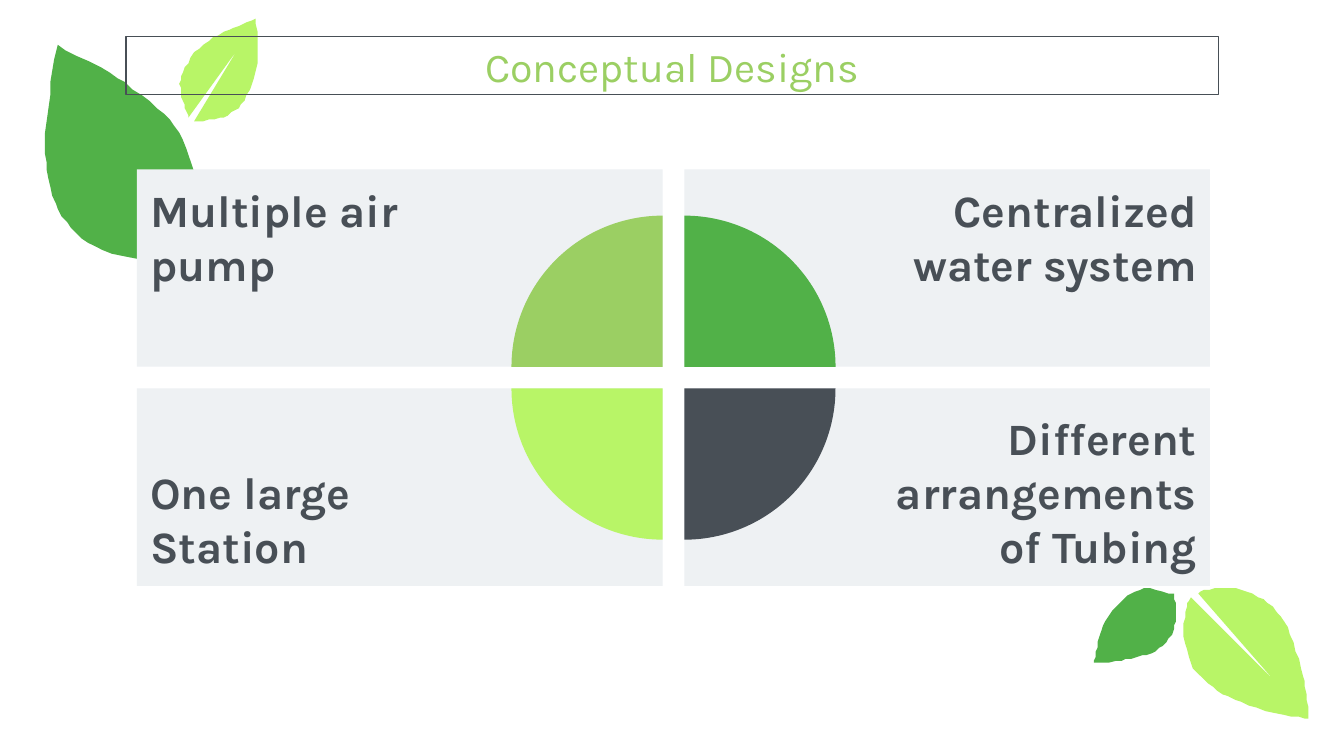
import pptx
import pptx.dml.color
import pptx.enum.shapes
import pptx.enum.text
import pptx.util

Pt = pptx.util.Pt
SHAPE = pptx.enum.shapes.MSO_SHAPE
ALIGN = pptx.enum.text.PP_ALIGN
ANCHOR = pptx.enum.text.MSO_ANCHOR

FONT = "Karla"
COLORS = {
    "lime": "B8F567",
    "green": "51B148",
    "olive": "9BCF63",
    "slate": "484F56",
    "panel": "EEF1F3",
}

# Panel grid, in points
LEFT, TOP = 73.4, 90.7
WIDTH, HEIGHT = 281.6, 105.8
GAP = 11.6
RADIUS = 81
INSET, PIE_INSET = 7.2, 108

# Text, column, row, pie colour and pie rotation
PANELS = [
    ("Multiple air pump", 0, 0, "olive", 0),
    ("Centralized water system", 1, 0, "green", 90),
    ("One large Station", 0, 1, "lime", 270),
    ("Different arrangements of Tubing", 1, 1, "slate", 180),
]

# Each leaf has two smooth edges that meet at the tip, and maybe a notch for the vein
LEAVES = [
    ("lime",
     [(641.5, 317.5), (650.9, 315.4), (662.4, 315.4), (673.9, 319.7), (684, 327.6),
      (691.2, 339.8), (697, 357.8), (699.8, 371.5), (701.3, 385.2)],
     [(701.3, 385.2), (687.6, 383), (668.9, 378), (655.2, 371.5), (645.1, 364.3),
      (637.9, 355), (634.3, 341.3), (635, 327.6), (637.9, 320.4)],
     [(682.6, 365)]),
    ("green",
     [(628.6, 318.2), (615.6, 315.4), (606.2, 317.5), (597.6, 324.7), (591.1, 335.5),
      (587.5, 347), (586.1, 355)],
     [(586.1, 355), (597.6, 354.2), (609.1, 352.1), (619.2, 348.5), (626.4, 342),
      (630, 332.6), (630, 324.7), (628.6, 318.2)],
     []),
    ("lime",
     [(104.4, 64.8), (115.2, 64.1), (123.8, 60.5), (131, 54), (136.1, 41.8),
      (138.2, 25.9), (136.8, 10.1)],
     [(136.8, 10.1), (125.3, 15.1), (114.5, 20.2), (104.4, 28.1), (97.9, 38.9),
      (96.5, 46.8), (98.6, 56.2), (101.5, 62.6)],
     [(126.7, 26.6)]),
    ("green",
     [(31, 24.5), (54, 36), (71.3, 47.5), (87.8, 61.2), (97.9, 74.9), (104.4, 97.9),
      (101.5, 115.9), (95.8, 128.2), (87.8, 139.7)],
     [(87.8, 139.7), (69.8, 138.2), (51.1, 132.5), (38.2, 121.7), (29.5, 108.7),
      (25.2, 91.4), (24.5, 72), (27.4, 43.9), (31, 24.5)],
     []),
]


def color(name):
    return pptx.dml.color.RGBColor.from_string(COLORS[name])


def paint(shape, name):
    shape.shadow.inherit = False
    shape.fill.solid()
    shape.fill.fore_color.rgb = color(name)
    shape.line.fill.background()


def smooth(anchors, steps=4):
    """Return points on a Catmull-Rom curve through the anchors."""
    padded = [anchors[0], *anchors, anchors[-1]]
    points = [anchors[0]]
    for a, b, c, d in zip(padded, padded[1:], padded[2:], padded[3:]):
        for step in range(1, steps + 1):
            t = step / steps
            points.append(tuple(
                q + t * (r - p) / 2
                + t * t * (2 * p - 5 * q + 4 * r - s) / 2
                + t ** 3 * (3 * q - p - 3 * r + s) / 2
                for p, q, r, s in zip(a, b, c, d)))
    return points


def add_leaf(page, fill, first_edge, second_edge, notch):
    points = smooth(first_edge) + smooth(second_edge)[1:] + notch
    builder = page.shapes.build_freeform(*points[0], scale=Pt(1))
    builder.add_line_segments(points[1:], close=True)
    paint(builder.convert_to_shape(), fill)


def write(shape, text, size, name, align, anchor, bold=False):
    frame = shape.text_frame
    frame.word_wrap = True
    frame.vertical_anchor = anchor
    frame.margin_left = frame.margin_right = Pt(INSET)
    frame.margin_top = frame.margin_bottom = Pt(INSET)
    frame.text = text
    para = frame.paragraphs[0]
    para.alignment = align
    font = para.runs[0].font
    font.name, font.size, font.bold = FONT, Pt(size), bold
    font.color.rgb = color(name)


def add_panel(page, text, column, row):
    box = page.shapes.add_shape(
        SHAPE.RECTANGLE, Pt(LEFT + column * (WIDTH + GAP)),
        Pt(TOP + row * (HEIGHT + GAP)), Pt(WIDTH), Pt(HEIGHT))
    paint(box, "panel")
    write(box, text, 24, "slate", ALIGN.RIGHT if column else ALIGN.LEFT,
          ANCHOR.BOTTOM if row else ANCHOR.TOP, bold=True)
    # Keep the words clear of the quarter circle
    if column:
        box.text_frame.margin_left = Pt(PIE_INSET)
    else:
        box.text_frame.margin_right = Pt(PIE_INSET)


def add_quarter(page, column, row, fill, rotation):
    center_x = LEFT + WIDTH + column * GAP
    center_y = TOP + HEIGHT + row * GAP
    pie = page.shapes.add_shape(
        SHAPE.PIE, Pt(center_x - RADIUS), Pt(center_y - RADIUS),
        Pt(2 * RADIUS), Pt(2 * RADIUS))
    pie.adjustments[0] = 108
    pie.adjustments[1] = 162
    pie.rotation = rotation
    paint(pie, fill)


def add_title(page, text):
    box = page.shapes.add_shape(
        SHAPE.RECTANGLE, Pt(67.5), Pt(19.6), Pt(585.4), Pt(31.2))
    box.shadow.inherit = False
    box.fill.background()
    box.line.color.rgb = color("slate")
    box.line.width = Pt(0.75)
    write(box, text, 22, "olive", ALIGN.CENTER, ANCHOR.MIDDLE)


def main():
    deck = pptx.Presentation()
    deck.slide_width, deck.slide_height = Pt(720), Pt(405)
    page = deck.slides.add_slide(deck.slide_layouts[6])

    # Leaves behind the content
    for leaf in LEAVES:
        add_leaf(page, *leaf)

    # Four panels, then the quarter circles at their inner corners
    for text, column, row, _, _ in PANELS:
        add_panel(page, text, column, row)
    for _, column, row, fill, rotation in PANELS:
        add_quarter(page, column, row, fill, rotation)

    # Title
    add_title(page, "Conceptual Designs")
    deck.save("out.pptx")


if __name__ == "__main__":
    main()
